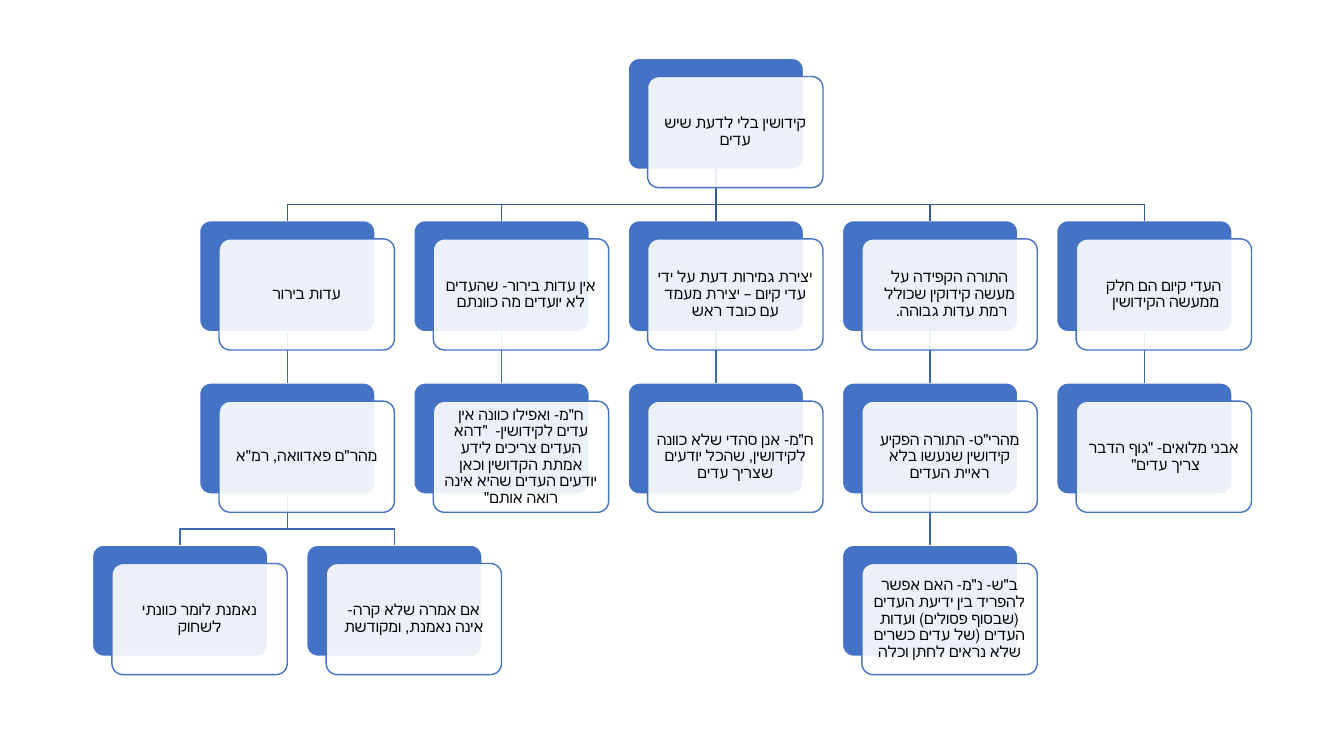
"""Build a right-to-left tree chart of the views on betrothal without known witnesses."""
from lxml import etree
from pptx import Presentation
from pptx.dml.color import RGBColor
from pptx.enum.shapes import MSO_CONNECTOR, MSO_SHAPE
from pptx.enum.text import MSO_ANCHOR, PP_ALIGN
from pptx.oxml.ns import qn
from pptx.util import Cm, Pt

STRAIGHT = MSO_CONNECTOR.STRAIGHT
ROUNDED = MSO_SHAPE.ROUNDED_RECTANGLE
MIDDLE = MSO_ANCHOR.MIDDLE
CENTER = PP_ALIGN.CENTER

BLUE = RGBColor(0x44, 0x72, 0xC4)
TOP_BRANCH = RGBColor(0x36, 0x5B, 0x9D)
LOWER_BRANCH = RGBColor(0x3E, 0x67, 0xB2)
WHITE = RGBColor(0xFF, 0xFF, 0xFF)
BLACK = RGBColor(0x00, 0x00, 0x00)

FIRST_LEFT, COLUMN_STEP = Cm(5.03), Cm(5.4)
FIRST_TOP, ROW_STEP = Cm(1.47), Cm(4.09)
CARD_WIDTH, CARD_HEIGHT = Cm(4.42), Cm(2.8)
PANEL_SHIFT_X, PANEL_SHIFT_Y = Cm(0.49), Cm(0.46)
BEND_DROP = Cm(0.88)
INSET = Cm(0.13)

# key: (column, row, parent, wording)
NODES = {
    "root": (2, 0, None, 'קידושין בלי לדעת שיש עדים'),
    "clarify": (0, 1, "root", 'עדות בירור'),
    "no_clarify": (1, 1, "root", 'אין עדות בירור- שהעדים לא יועדים מה כוונתם'),
    "resolve": (2, 1, "root", 'יצירת גמירות דעת על ידי עדי קיום – יצירת מעמד עם כובד ראש'),
    "torah": (3, 1, "root", 'התורה הקפידה על מעשה קידוקין שכולל רמת עדות גבוהה. '),
    "part_of_act": (4, 1, "root", 'העדי קיום הם חלק ממעשה הקידושין '),
    "maharam": (0, 2, "clarify", 'מהר"ם פאדוואה, רמ"א'),
    "intent": (1, 2, "no_clarify", 'ח"מ- ואפילו כוונה אין עדים לקידושין-  "דהא העדים צריכים לידע אמתת הקדושין וכאן יודעים העדים שהיא אינה רואה אותם"'),
    "all_know": (2, 2, "resolve", 'ח"מ- אנן סהדי שלא כוונה לקידושין, שהכל יודעים שצריך עדים'),
    "maharit": (3, 2, "torah", 'מהרי"ט- התורה הפקיע קידושין שנעשו בלא ראיית העדים'),
    "avnei": (4, 2, "part_of_act", 'אבני מלואים- "גוף הדבר צריך עדים" '),
    "jest": (-0.5, 3, "maharam", 'נאמנת לומר כוונתי לשחוק'),
    "denial": (0.5, 3, "maharam", 'אם אמרה שלא קרה- אינה נאמנת, ומקודשת'),
    "separate": (3, 3, "maharit", 'ב"ש- נ"מ- האם אפשר להפריד בין ידיעת העדים (שבסוף פסולים) ועדות העדים (של עדים כשרים שלא נראים לחתן וכלה'),
}

prs = Presentation()
prs.slide_width, prs.slide_height = Cm(33.87), Cm(19.05)
slide = prs.slides.add_slide(prs.slide_layouts[6])


def add_card(left, top, fill, outline):
    card = slide.shapes.add_shape(ROUNDED, left, top, CARD_WIDTH, CARD_HEIGHT)
    card.adjustments[0] = 0.1
    card.shadow.inherit = False
    card.fill.solid()
    card.fill.fore_color.rgb = fill
    card.line.color.rgb = outline
    card.line.width = Pt(1)
    return card


backs = {}
for key, (column, row, _, _) in NODES.items():
    left = FIRST_LEFT + round(column * COLUMN_STEP)
    backs[key] = add_card(left, FIRST_TOP + row * ROW_STEP, BLUE, WHITE)

for key, (column, row, parent, _) in NODES.items():
    if parent is None:
        continue
    upper, lower = backs[parent], backs[key]
    start_x, start_y = upper.left + CARD_WIDTH // 2, upper.top + CARD_HEIGHT
    end_x, end_y = lower.left + CARD_WIDTH // 2, lower.top
    if start_x == end_x:
        branch = slide.shapes.add_connector(STRAIGHT, start_x, start_y, end_x, end_y)
        branch.begin_connect(upper, 2)
        branch.end_connect(lower, 0)
        etree.SubElement(branch._element.spPr, qn("a:effectLst"))
    else:
        bend_y = start_y + BEND_DROP
        outline = slide.shapes.build_freeform(start_x, start_y)
        outline.add_line_segments(
            [(start_x, bend_y), (end_x, bend_y), (end_x, end_y)], close=False)
        branch = outline.convert_to_shape()
        branch.fill.background()
        branch.shadow.inherit = False
    branch.line.color.rgb = TOP_BRANCH if row == 1 else LOWER_BRANCH
    branch.line.width = Pt(1)

for key, (_, _, _, wording) in NODES.items():
    back = backs[key]
    panel = add_card(back.left + PANEL_SHIFT_X, back.top + PANEL_SHIFT_Y, WHITE, BLUE)
    white = panel._element.spPr.find(qn("a:solidFill"))[0]
    etree.SubElement(white, qn("a:alpha"), val="90000")

    frame = panel.text_frame
    frame.word_wrap = True
    frame.vertical_anchor = MIDDLE
    frame.margin_left = frame.margin_right = INSET
    frame.margin_top = frame.margin_bottom = INSET
    paragraph = frame.paragraphs[0]
    paragraph.text = wording
    paragraph.alignment = CENTER
    paragraph.line_spacing = 0.9
    paragraph.font.size = Pt(11)
    paragraph.font.name = "Calibri"
    paragraph.font.color.rgb = BLACK
    paragraph._p.pPr.set("rtl", "1")

prs.save("out.pptx")
